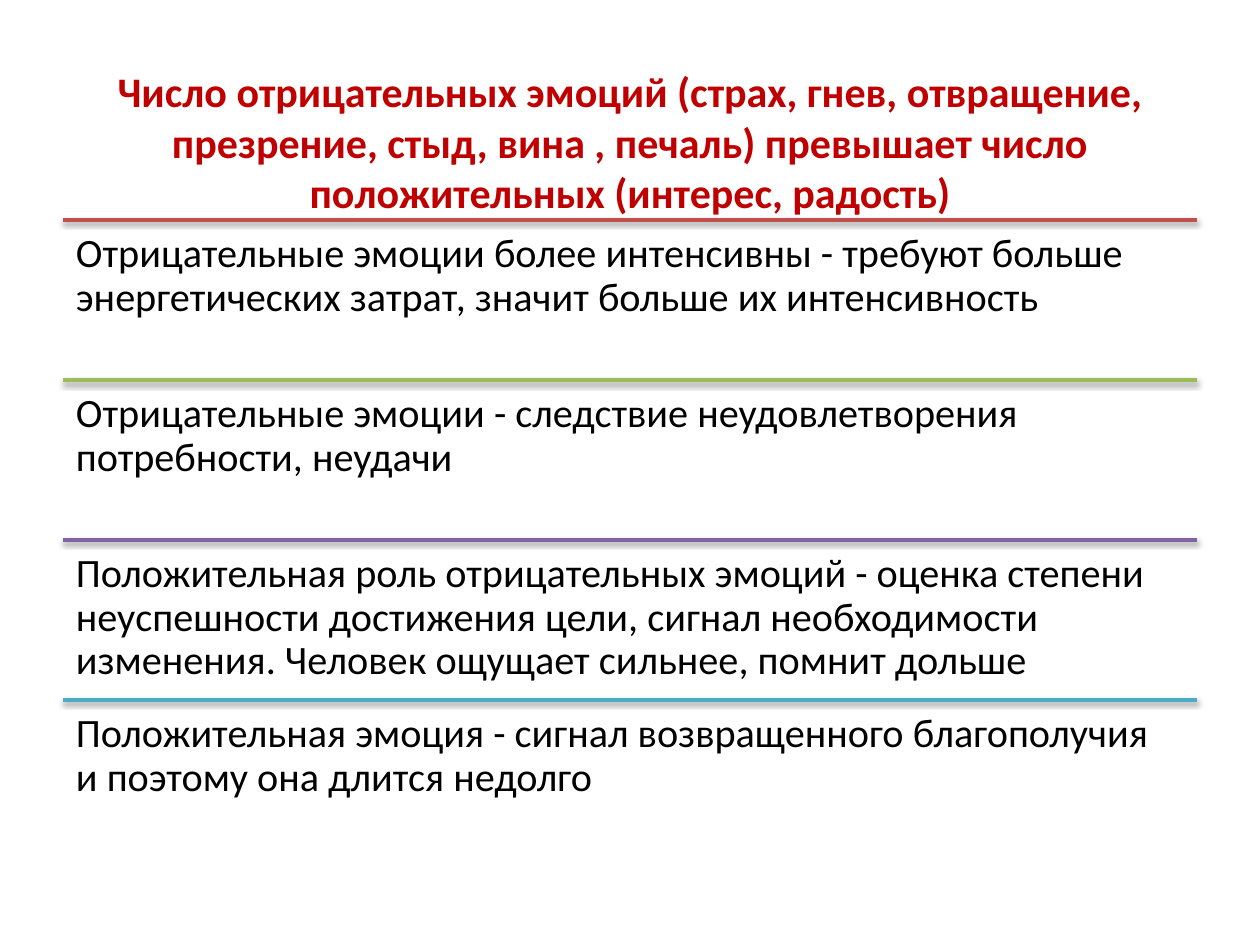
from lxml.etree import SubElement
from pptx import Presentation
from pptx.dml.color import RGBColor
from pptx.enum.shapes import MSO_CONNECTOR as Connector
from pptx.enum.text import MSO_ANCHOR as Anchor, PP_ALIGN as Align
from pptx.oxml.ns import qn
from pptx.util import Emu, Pt

PX = 914400 // 126
TITLE_ONLY = 5

TITLE = ("Число отрицательных эмоций (страх, гнев, отвращение, презрение, стыд, "
         "вина , печаль) превышает число положительных (интерес, радость)")
STATEMENTS = [
    ("C0504D", "Отрицательные эмоции более интенсивны - требуют больше "
               "энергетических затрат, значит больше их интенсивность"),
    ("9BBB59", "Отрицательные эмоции - следствие неудовлетворения потребности, неудачи"),
    ("8064A2", "Положительная роль отрицательных эмоций - оценка степени "
               "неуспешности достижения цели, сигнал необходимости изменения. "
               "Человек ощущает сильнее, помнит дольше"),
    ("4BACC6", "Положительная эмоция - сигнал возвращенного благополучия \n"
               "и поэтому она длится недолго"),
]


def px(length):
    return Emu(length * PX)


def color(hex_string):
    return RGBColor.from_string(hex_string)


def write_text(frame, text, size, fill="000000", bold=False, align=Align.LEFT,
               anchor=Anchor.TOP, spacing=None, inset=None):
    frame.word_wrap = True
    frame.vertical_anchor = anchor
    if inset is not None:
        frame.margin_left = frame.margin_right = px(inset)
        frame.margin_top = frame.margin_bottom = px(inset)
    paragraph = frame.paragraphs[0]
    paragraph.text = text
    paragraph.alignment = align
    paragraph.line_spacing = spacing
    for run in paragraph.runs:
        run.font.name = "Calibri"
        run.font.size = Pt(size)
        run.font.bold = bold
        run.font.color.rgb = color(fill)


def add_shadow(shape):
    """Give the shape a soft shadow straight below it."""
    effects = SubElement(shape._element.spPr, qn("a:effectLst"))
    shadow = SubElement(effects, qn("a:outerShdw"), blurRad="40000", dist="20000",
                        dir="5400000", rotWithShape="0")
    black = SubElement(shadow, qn("a:srgbClr"), val="000000")
    SubElement(black, qn("a:alpha"), val="38000")


def place_title(slide, left, top, width, height):
    title = slide.shapes.title
    title.left, title.top, title.width, title.height = map(px, (left, top, width, height))
    write_text(title.text_frame, TITLE, 24, fill="C00000", bold=True,
               align=Align.CENTER, anchor=Anchor.MIDDLE)


def add_statement(slide, left, top, width, height, accent, text):
    """Add one row: a coloured rule with the text under it."""
    rule = slide.shapes.add_connector(Connector.STRAIGHT, px(left), px(top),
                                      px(left + width), px(top))
    rule.line.color.rgb = color(accent)
    rule.line.width = Pt(2)
    add_shadow(rule)
    box = slide.shapes.add_textbox(px(left), px(top), px(width), px(height))
    write_text(box.text_frame, text, 23, spacing=0.9, inset=13)


def add_statements(slide, left, top, width, height):
    row_height = height // len(STATEMENTS)
    for row, (accent, text) in enumerate(STATEMENTS):
        add_statement(slide, left, top + row * row_height, width, row_height, accent, text)


def main():
    presentation = Presentation()
    presentation.slide_width, presentation.slide_height = px(1260), px(945)
    slide = presentation.slides.add_slide(presentation.slide_layouts[TITLE_ONLY])
    place_title(slide, 63, 38, 1134, 207)
    add_statements(slide, 63, 220, 1134, 640)
    presentation.save("out.pptx")


if __name__ == "__main__":
    main()
